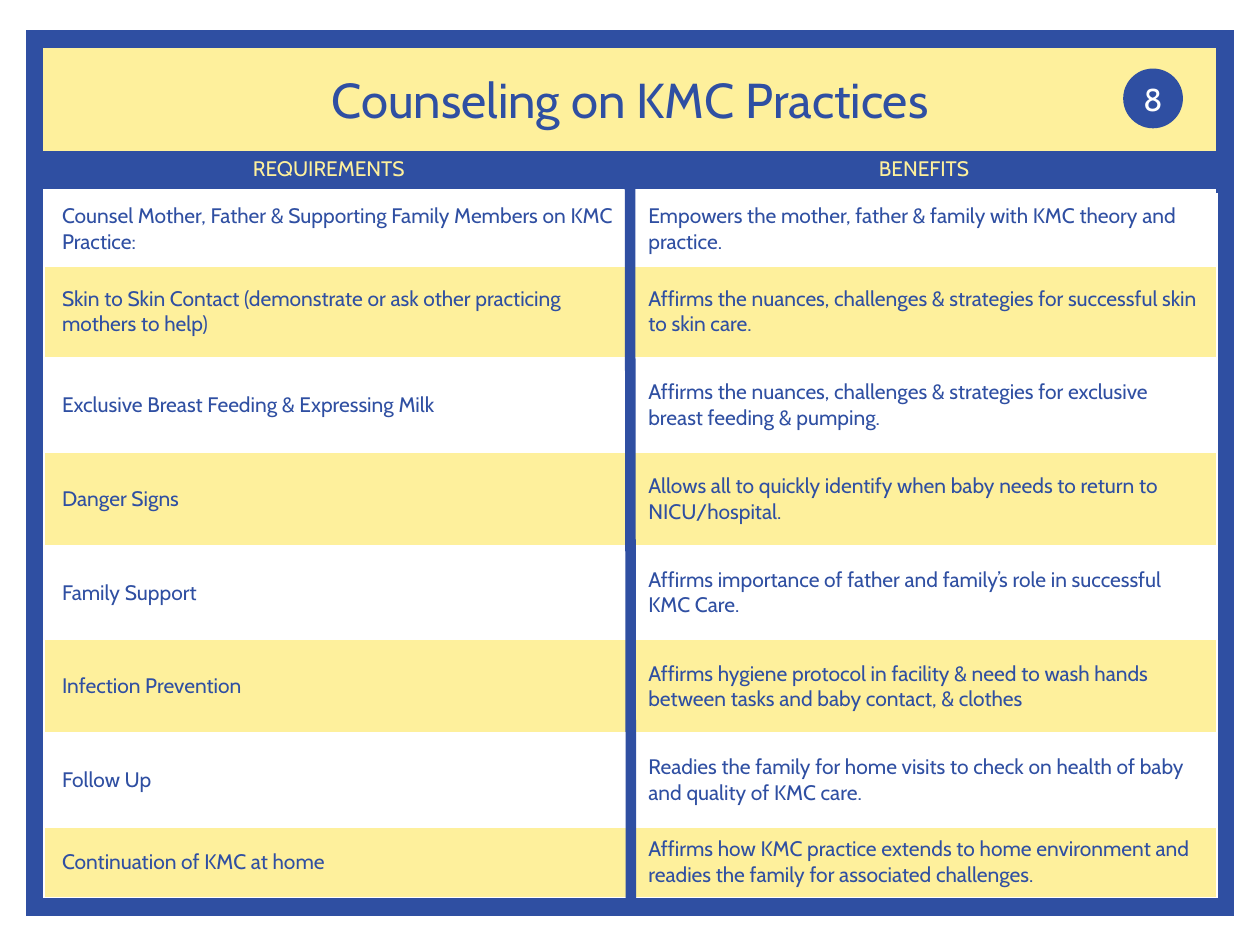
from pptx import Presentation
from pptx.dml.color import RGBColor
from pptx.enum.shapes import MSO_CONNECTOR as LINK, MSO_SHAPE as KIND
from pptx.enum.text import MSO_ANCHOR as ANCHOR, PP_ALIGN as ALIGN
from pptx.oxml import parse_xml
from pptx.oxml.ns import nsdecls
from pptx.util import Cm, Pt

BLUE, CREAM, WHITE = "2F4FA2", "FEF09C", "FFFFFF"

ROWS = [
    ("Counsel Mother, Father & Supporting Family Members on KMC Practice:",
     "Empowers the mother, father & family with KMC theory and practice."),
    ("Skin to Skin Contact (demonstrate or ask other practicing mothers to help)",
     "Affirms the nuances, challenges & strategies for successful skin to skin care."),
    ("Exclusive Breast Feeding & Expressing Milk",
     "Affirms the nuances, challenges & strategies for exclusive breast feeding & pumping."),
    ("Danger Signs",
     "Allows all to quickly identify when baby needs to return to NICU/hospital."),
    ("Family Support",
     "Affirms importance of father and family’s role in successful KMC Care."),
    ("Infection Prevention",
     "Affirms hygiene protocol in facility & need to wash hands between tasks "
     "and baby contact, & clothes"),
    ("Follow Up",
     "Readies the family for home visits to check on health of baby and quality of KMC care."),
    ("Continuation of KMC at home",
     "Affirms how KMC practice extends to home environment and readies the family "
     "for associated challenges."),
]


def color(code):
    return RGBColor.from_string(code)


def write(frame, text, size=12, ink=BLUE, align=ALIGN.CENTER, anchor=None):
    """Put one formatted paragraph in a text frame."""
    frame.word_wrap = True
    if anchor is not None:
        frame.vertical_anchor = anchor
    para = frame.paragraphs[0]
    para.alignment = align
    run = para.add_run()
    run.text = text
    run.font.name, run.font.size = "Cabin", Pt(size)
    run.font.color.rgb = color(ink)


class Card:
    """Holds the font style and the current slide."""

    def __init__(self, slide):
        self.slide = slide
        self.shapes = slide.shapes

    def title(self, text, x, y, w, h):
        head = self.shapes.title
        head.left, head.top, head.width, head.height = Cm(x), Cm(y), Cm(w), Cm(h)
        write(head.text_frame, text, size=28, anchor=ANCHOR.MIDDLE)
        # Bring the title in front of the band
        head.element.getparent().append(head.element)

    def shape(self, x, y, w, h, kind=KIND.RECTANGLE, fill=None, line=None, width=1):
        item = self.shapes.add_shape(kind, Cm(x), Cm(y), Cm(w), Cm(h))
        item.shadow.inherit = False
        if fill:
            item.fill.solid()
            item.fill.fore_color.rgb = color(fill)
        else:
            item.fill.background()
        if line:
            item.line.color.rgb = color(line)
            item.line.width = Pt(width)
            item.line._get_or_add_ln().append(
                parse_xml(f'<a:miter {nsdecls("a")} lim="800000"/>'))
        else:
            item.line.fill.background()
        return item

    def label(self, text, x, y, w, h, **style):
        box = self.shapes.add_textbox(Cm(x), Cm(y), Cm(w), Cm(h))
        write(box.text_frame, text, **style)

    def badge(self, text, x, y, size):
        disc = self.shape(x, y, size, size, KIND.OVAL, fill=BLUE, line=BLUE)
        frame = disc.text_frame
        frame.margin_left = frame.margin_right = 0
        write(frame, text, size=18, ink=WHITE, anchor=ANCHOR.MIDDLE)

    def rule(self, x1, y1, x2, y2, width=6):
        line = self.shapes.add_connector(LINK.STRAIGHT, Cm(x1), Cm(y1), Cm(x2), Cm(y2))
        line.line.color.rgb = color(BLUE)
        line.line.width = Pt(width)
        line.element.spPr.append(parse_xml(f'<a:effectLst {nsdecls("a")}/>'))

    def edges(self, cell, base):
        """Draw white borders; base is the width of the bottom one."""
        props = cell._tc.get_or_add_tcPr()
        for spot, side in enumerate("LRTB"):
            wide = Pt(base if side == "B" else 1)
            props.insert(spot, parse_xml(
                f'<a:ln{side} {nsdecls("a")} w="{wide}"><a:solidFill>'
                f'<a:srgbClr val="{WHITE}"/></a:solidFill></a:ln{side}>'))

    def table(self, rows, x, y, w, ends, mid):
        """Build the grid: outer rows are `ends` tall, the others `mid`."""
        last = len(rows) - 1
        tall = [ends if r in (0, last) else mid for r in range(len(rows))]
        grid = self.shapes.add_table(len(rows), 2, Cm(x), Cm(y), Cm(w), Cm(sum(tall))).table
        grid.first_row = grid.horz_banding = False
        for r, texts in enumerate(rows):
            grid.rows[r].height = Cm(tall[r])
            for c, text in enumerate(texts):
                cell = grid.cell(r, c)
                cell.fill.solid()
                cell.fill.fore_color.rgb = color(CREAM if r % 2 else WHITE)
                cell.margin_left, cell.margin_right = Cm(0.36), Cm(0.18)
                cell.margin_top = cell.margin_bottom = Cm(0.1)
                cell.vertical_anchor = ANCHOR.MIDDLE
                write(cell.text_frame, text, align=ALIGN.LEFT)
                self.edges(cell, 1 if r else 3)


def main():
    deck = Presentation()
    deck.slide_width, deck.slide_height = Cm(25.4), Cm(19.05)
    card = Card(deck.slides.add_slide(deck.slide_layouts[5]))
    left, wide = 0.7, 24

    # Band, frame and heading bar
    card.shape(left, 0.79, wide, 3, fill=CREAM)
    card.shape(left, 0.79, wide, 17.5, line=BLUE, width=10)
    card.shape(left, 3.05, wide, 0.76, fill=BLUE)
    for text, x in (("REQUIREMENTS", left), ("BENEFITS", 12.7)):
        card.label(text, x, 3.02, 11.86, 0.76, ink=CREAM)

    # Table and dividers
    card.table(ROWS, 0.89, 3.91, 23.64, ends=1.42, mid=1.89)
    card.rule(12.7, 3.71, 12.72, 18.16)
    card.title("Counseling on KMC Practices", left, 1.27, wide, 1.45)
    card.rule(left, 3.71, 24.54, 3.71)

    # Card number
    card.badge("8", 22.66, 1.4, 1.17)

    deck.save("out.pptx")


if __name__ == "__main__":
    main()
